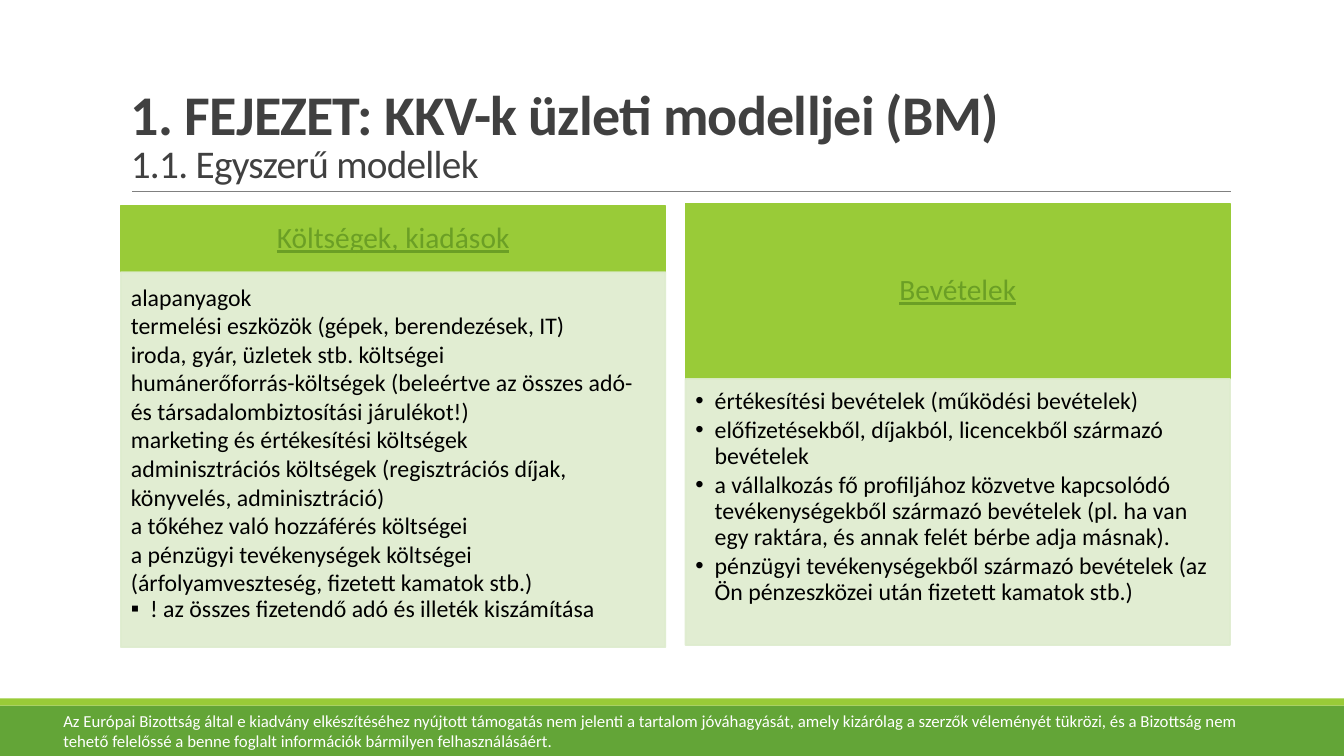
import pptx
import pptx.dml.color
import pptx.enum.shapes
import pptx.enum.text
import pptx.oxml
import pptx.oxml.ns
import pptx.util
from pptx.util import Inches

COLORS = {
    "lime": "99CB38",
    "green": "63A537",
    "pale": "DEECCE",
    "heading": "6B9F25",
    "title": "404040",
    "rule": "808080",
    "black": "000000",
    "white": "FFFFFF",
}
ALIGN = pptx.enum.text.PP_ALIGN
ANCHOR = pptx.enum.text.MSO_ANCHOR

COSTS = [
    "alapanyagok",
    "termelési eszközök (gépek, berendezések, IT)",
    "iroda, gyár, üzletek stb. költségei",
    "humánerőforrás-költségek (beleértve az összes adó- és társadalombiztosítási járulékot!)",
    "marketing és értékesítési költségek",
    "adminisztrációs költségek (regisztrációs díjak, könyvelés, adminisztráció)",
    "a tőkéhez való hozzáférés költségei",
    "a pénzügyi tevékenységek költségei (árfolyamveszteség, fizetett kamatok stb.)",
]
COST_NOTE = "! az összes fizetendő adó és illeték kiszámítása"
REVENUES = [
    "értékesítési bevételek (működési bevételek)",
    "előfizetésekből, díjakból, licencekből származó bevételek",
    "a vállalkozás fő profiljához közvetve kapcsolódó tevékenységekből származó "
    "bevételek (pl. ha van egy raktára, és annak felét bérbe adja másnak).",
    "pénzügyi tevékenységekből származó bevételek (az Ön pénzeszközei után fizetett "
    "kamatok stb.)",
]
DISCLAIMER = (
    "Az Európai Bizottság által e kiadvány elkészítéséhez nyújtott támogatás nem jelenti "
    "a tartalom jóváhagyását, amely kizárólag a szerzők véleményét tükrözi, és a Bizottság "
    "nem tehető felelőssé a benne foglalt információk bármilyen felhasználásáért."
)


def rgb(name):
    return pptx.dml.color.RGBColor.from_string(COLORS[name])


def element(tag, **attributes):
    new_element = pptx.oxml.parse_xml(f"<a:{tag} {pptx.oxml.ns.nsdecls('a')}/>")
    for name, value in attributes.items():
        new_element.set(name, str(value))
    return new_element


class SlideBuilder:
    font_name = "Calibri"
    body_size = 17
    indent = Inches(0.19)

    def __init__(self, slide):
        self.slide = slide

    def rectangle(self, left, top, width, height, color, outlined=False, opacity=100):
        shape = self.slide.shapes.add_shape(
            pptx.enum.shapes.MSO_SHAPE.RECTANGLE,
            Inches(left), Inches(top), Inches(width), Inches(height))
        shape.shadow.inherit = False
        shape.fill.solid()
        shape.fill.fore_color.rgb = rgb(color)
        if outlined:
            shape.line.color.rgb = rgb(color)
            shape.line.width = pptx.util.Pt(1.25)
        else:
            shape.line.fill.background()
        if opacity < 100:
            for color_element in shape._element.spPr.iter(pptx.oxml.ns.qn("a:srgbClr")):
                color_element.append(element("alpha", val=opacity * 1000))
        return shape

    def rule(self, left, right, top):
        connector = self.slide.shapes.add_connector(
            pptx.enum.shapes.MSO_CONNECTOR.STRAIGHT,
            Inches(left), Inches(top), Inches(right), Inches(top))
        connector.line.color.rgb = rgb("rule")
        connector.line.width = pptx.util.Pt(0.5)
        connector._element.spPr.append(element("effectLst"))

    def text_box(self, left, top, width, height, text, anchor=ANCHOR.TOP):
        box = self.slide.shapes.add_textbox(
            Inches(left), Inches(top), Inches(width), Inches(height))
        text_frame = box.text_frame
        text_frame.word_wrap = True
        text_frame.vertical_anchor = anchor
        text_frame.text = text
        return text_frame.paragraphs[0]

    def style(self, run, size, color, bold=False, underline=False):
        run.font.name = self.font_name
        run.font.size = pptx.util.Pt(size)
        run.font.color.rgb = rgb(color)
        run.font.bold = bold
        run.font.underline = underline

    def bullet(self, paragraph, character):
        properties = paragraph._p.get_or_add_pPr()
        properties.set("marL", str(self.indent))
        properties.set("indent", str(-self.indent))
        properties.append(element("buFont", typeface="Arial"))
        properties.append(element("buChar", char=character))

    def title(self, heading, subheading):
        # A vertical tab is a line break within the paragraph.
        paragraph = self.text_box(1.2, 0.31, 11, 1.59, f"{heading}\v{subheading}", ANCHOR.BOTTOM)
        paragraph.line_spacing = 0.85
        for run, size, bold in zip(paragraph.runs, (40, 28), (True, False)):
            self.style(run, size, "title", bold)
            run.font._element.set("spc", "-50")

    def footer(self, text):
        self.rectangle(0, 7, 13.33, 0.5, "green")
        self.rectangle(0, 6.93, 13.33, 0.07, "lime")
        paragraph = self.text_box(0.53, 7, 12.3, 0.5, text)
        self.style(paragraph.runs[0], 12, "white")

    def panel(self, left, top, header_height, body_height, heading, items):
        """Draw a header over a body; items are (text, bullet or None) pairs."""
        header = self.rectangle(left, top, 5.4, header_height, "lime", outlined=True)
        header.text_frame.text = heading
        header.text_frame.vertical_anchor = ANCHOR.MIDDLE
        paragraph = header.text_frame.paragraphs[0]
        paragraph.alignment = ALIGN.CENTER
        paragraph.line_spacing = 0.9
        self.style(paragraph.runs[0], 21, "heading", underline=True)

        body = self.rectangle(left, top + header_height, 5.4, body_height, "pale",
                              outlined=True, opacity=90)
        text_frame = body.text_frame
        text_frame.word_wrap = True
        text_frame.vertical_anchor = ANCHOR.TOP
        text_frame.margin_left = text_frame.margin_top = Inches(0.1)
        text_frame.margin_right = Inches(0.13)
        text_frame.margin_bottom = Inches(0.15)
        text_frame.text = "\n".join(text for text, _ in items)
        for paragraph, (_, character) in zip(text_frame.paragraphs, items):
            paragraph.alignment = ALIGN.LEFT
            paragraph.line_spacing = 0.9 if character else 1.0
            paragraph.space_after = pptx.util.Pt(2.5 if character else 0)
            if character:
                self.bullet(paragraph, character)
            self.style(paragraph.runs[0], self.body_size, "black")


def main():
    presentation = pptx.Presentation()
    presentation.slide_width = Inches(13.33)
    presentation.slide_height = Inches(7.5)
    builder = SlideBuilder(presentation.slides.add_slide(presentation.slide_layouts[6]))

    builder.footer(DISCLAIMER)
    builder.rule(1.31, 12.21, 1.9)
    builder.title("1. FEJEZET: KKV-k üzleti modelljei (BM)", "1.1. Egyszerű modellek")
    costs = [(text, None) for text in COSTS] + [(COST_NOTE, "▪")]
    builder.panel(1.2, 2.04, 0.66, 3.72, "Költségek, kiadások", costs)
    revenues = [(text, "•") for text in REVENUES]
    builder.panel(6.8, 2.02, 1.74, 2.64, "Bevételek", revenues)

    presentation.save("out.pptx")


if __name__ == "__main__":
    main()
